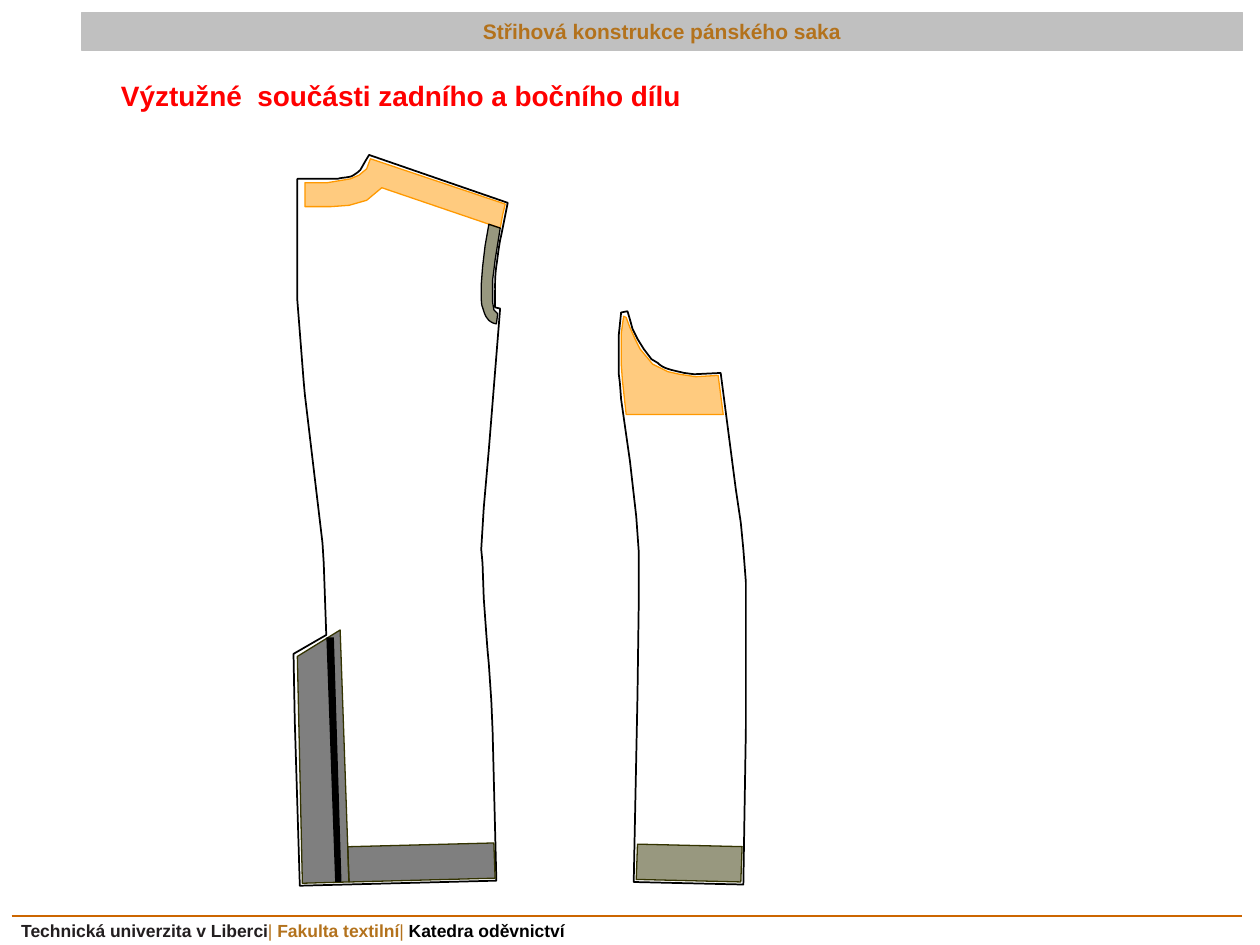
from dataclasses import dataclass
from typing import Optional

import lxml.etree
import pptx
import pptx.dml.color
import pptx.enum.shapes
import pptx.enum.text
import pptx.oxml.ns
import pptx.util

Pt = pptx.util.Pt
FONT = "Arial"
UNIT = 0.72  # points per drafting unit of the pattern pieces
CURVE_STEPS = 6
COLORS = {
    "black": "000000",
    "ink": "221E1F",
    "brown": "B3721C",
    "rule": "CC6600",
    "silver": "C0C0C0",
    "red": "FF0000",
    "orange": "FF9900",
    "olive": "333300",
}


@dataclass
class Piece:
    """Closed outline: pairs are corners, sextuples are cubic curves."""
    outline: list[tuple[int, ...]]
    fill: Optional[str] = None
    line: Optional[str] = None
    line_width: float = 0
    opacity: int = 50


@dataclass
class TextPart:
    text: str
    color: str
    bold: bool = True


BACK_PANEL = Piece([
    (236, 142), (260, 142), (268, 142), (271, 141, 276, 141, 279, 140),
    (281, 139, 284, 137, 286, 135), (290, 128), (293, 123), (403, 161), (398, 186),
    (396, 194, 395, 205, 394, 211), (393, 218, 393, 223, 393, 227),
    (393, 231, 393, 232, 393, 235), (393, 244), (397, 245), (388, 357), (384, 403),
    (382, 436), (383, 447), (384, 475), (386, 503), (387, 516), (388, 527),
    (390, 556), (391, 580), (394, 699), (238, 703), (234, 572), (233, 519),
    (259, 504), (257, 447), (256, 431), (242, 313), (241, 302), (236, 238),
    (236, 228), (236, 213),
], line="black", line_width=1)
VENT_FACING = Piece([(270, 500), (236, 521), (240, 701), (277, 700)], "black", "olive")
BACK_HEM = Piece([(276, 672), (392, 669), (393, 697), (277, 700)], "black", "olive")
VENT_TAPE = Piece([(259, 506), (266, 700), (271, 700), (265, 506)], "black", opacity=100)
SHOULDER_STAY = Piece([
    (242, 145), (242, 164), (263, 164), (277, 163), (291, 159), (303, 149),
    (397, 181), (399, 170), (401, 162), (294, 126), (291, 134), (285, 139),
    (278, 142), (272, 143), (260, 145), (256, 145),
], "orange", "orange")
ARMHOLE_STAY = Piece([
    (388, 178), (397, 181), (393, 206), (392, 214), (391, 222), (391, 231),
    (391, 240), (392, 246), (395, 249), (394, 257), (392, 257, 388, 255, 387, 253),
    (385, 251, 384, 247, 383, 244), (382, 242, 382, 238, 382, 235), (382, 225),
    (383, 212), (385, 195),
], "olive", "black")
SIDE_PANEL = Piece([
    (498, 247), (493, 248), (491, 267), (491, 282), (491, 296), (492, 304),
    (493, 317), (500, 366), (505, 410), (507, 438), (507, 450), (507, 476),
    (506, 552), (503, 700), (590, 702), (591, 641), (592, 578), (592, 484),
    (592, 462), (590, 436), (588, 415), (584, 388), (572, 296), (551, 297),
    (543, 296), (539, 295, 534, 294, 531, 293), (527, 292, 524, 290, 522, 288),
    (517, 285), (511, 277), (506, 269), (502, 261), (501, 257, 499, 250, 498, 247),
], line="black", line_width=1)
UNDERARM_STAY = Piece([
    (497, 329), (574, 329), (570, 298), (552, 299), (539, 297), (530, 295),
    (524, 292), (518, 289), (513, 283), (508, 277), (504, 269), (500, 260),
    (497, 252), (495, 251), (493, 265), (493, 276), (493, 288), (494, 302),
], "orange", "orange")
SIDE_HEM = Piece([(506, 670), (589, 672), (588, 700), (505, 698)], "olive", "olive")
PIECES = [BACK_PANEL, VENT_FACING, BACK_HEM, VENT_TAPE, SHOULDER_STAY,
          ARMHOLE_STAY, SIDE_PANEL, UNDERARM_STAY, SIDE_HEM]

FOOTER = [
    TextPart("Technická univerzita v Liberci", "ink"),
    TextPart("| ", "brown", False),
    TextPart("Fakulta textilní", "brown"),
    TextPart("| ", "brown", False),
    TextPart("Katedra oděvnictví", "black"),
]


def rgb(name: str) -> pptx.dml.color.RGBColor:
    return pptx.dml.color.RGBColor.from_string(COLORS[name])


def flatten(outline: list[tuple[int, ...]]) -> list[tuple[int, int]]:
    """Turn corners and cubic curves into points in slide units."""
    points = [outline[0]]
    for step in outline[1:]:
        if len(step) == 2:
            points.append(step)
            continue
        controls = [points[-1], step[0:2], step[2:4], step[4:6]]
        for index in range(1, CURVE_STEPS + 1):
            t = index / CURVE_STEPS
            weights = ((1 - t) ** 3, 3 * t * (1 - t) ** 2, 3 * t * t * (1 - t), t ** 3)
            points.append(tuple(
                sum(weight * control[axis] for weight, control in zip(weights, controls))
                for axis in (0, 1)))
    return [(Pt(x * UNIT), Pt(y * UNIT)) for x, y in points]


def draw_piece(slide, piece: Piece) -> None:
    start, *rest = flatten(piece.outline)
    builder = slide.shapes.build_freeform(*start)
    builder.add_line_segments(rest, close=True)
    shape = builder.convert_to_shape()
    shape.shadow.inherit = False
    if piece.fill:
        shape.fill.solid()
        shape.fill.fore_color.rgb = rgb(piece.fill)
        if piece.opacity < 100:
            color = shape.fill._xPr.find(".//" + pptx.oxml.ns.qn("a:srgbClr"))
            alpha = lxml.etree.SubElement(color, pptx.oxml.ns.qn("a:alpha"))
            alpha.set("val", str(piece.opacity * 1000))
    else:
        shape.fill.background()
    if piece.line:
        shape.line.color.rgb = rgb(piece.line)
        shape.line.width = Pt(piece.line_width)
    else:
        shape.line.fill.background()


def place(shape, left: float, top: float, width: float, height: float) -> None:
    shape.left, shape.top, shape.width, shape.height = map(Pt, (left, top, width, height))


def format_paragraph(paragraph, size: float, color: str, alignment: str) -> None:
    paragraph.alignment = pptx.enum.text.PP_ALIGN[alignment]
    paragraph.font.name = FONT
    paragraph.font.size = Pt(size)
    paragraph.font.bold = True
    paragraph.font.color.rgb = rgb(color)


def add_title(slide) -> None:
    title = slide.shapes.title
    place(title, 61.92, 41.04, 601.2, 26.64)
    frame = title.text_frame
    frame.text = "Výztužné  součásti zadního a bočního dílu"
    frame.word_wrap = True
    frame.auto_size = pptx.enum.text.MSO_AUTO_SIZE.NONE
    frame.vertical_anchor = pptx.enum.text.MSO_ANCHOR.TOP
    format_paragraph(frame.paragraphs[0], 16, "red", "LEFT")


def add_header(slide) -> None:
    banner = slide.shapes.add_shape(
        pptx.enum.shapes.MSO_SHAPE.RECTANGLE, Pt(46.8), Pt(7.2), Pt(663.12), Pt(21.6))
    banner.shadow.inherit = False
    banner.fill.solid()
    banner.fill.fore_color.rgb = rgb("silver")
    banner.line.color.rgb = rgb("silver")
    banner.line.width = Pt(0.75)
    frame = banner.text_frame
    frame.text = "Střihová konstrukce pánského saka"
    frame.vertical_anchor = pptx.enum.text.MSO_ANCHOR.MIDDLE
    format_paragraph(frame.paragraphs[0], 12, "brown", "CENTER")


def add_footer(slide) -> None:
    box = slide.shapes.add_textbox(Pt(5.04), Pt(522), Pt(421.2), Pt(19.44))
    box.text_frame.word_wrap = True
    paragraph = box.text_frame.paragraphs[0]
    paragraph.font.name = FONT
    paragraph.font.size = Pt(10)
    for part in FOOTER:
        run = paragraph.add_run()
        run.text = part.text
        run.font.bold = part.bold
        run.font.color.rgb = rgb(part.color)
    rule = slide.shapes.add_connector(
        pptx.enum.shapes.MSO_CONNECTOR.STRAIGHT, Pt(6.7), Pt(523.4), Pt(709.7), Pt(523.4))
    rule.line.color.rgb = rgb("rule")
    rule.line.width = Pt(1.5)
    lxml.etree.SubElement(rule._element.spPr, pptx.oxml.ns.qn("a:effectLst"))


def main() -> None:
    presentation = pptx.Presentation()
    presentation.slide_width, presentation.slide_height = Pt(720), Pt(540)
    slide = presentation.slides.add_slide(presentation.slide_layouts.get_by_name("Title Only"))
    add_header(slide)
    add_footer(slide)
    for piece in PIECES:
        draw_piece(slide, piece)
    add_title(slide)
    presentation.save("out.pptx")


if __name__ == "__main__":
    main()
